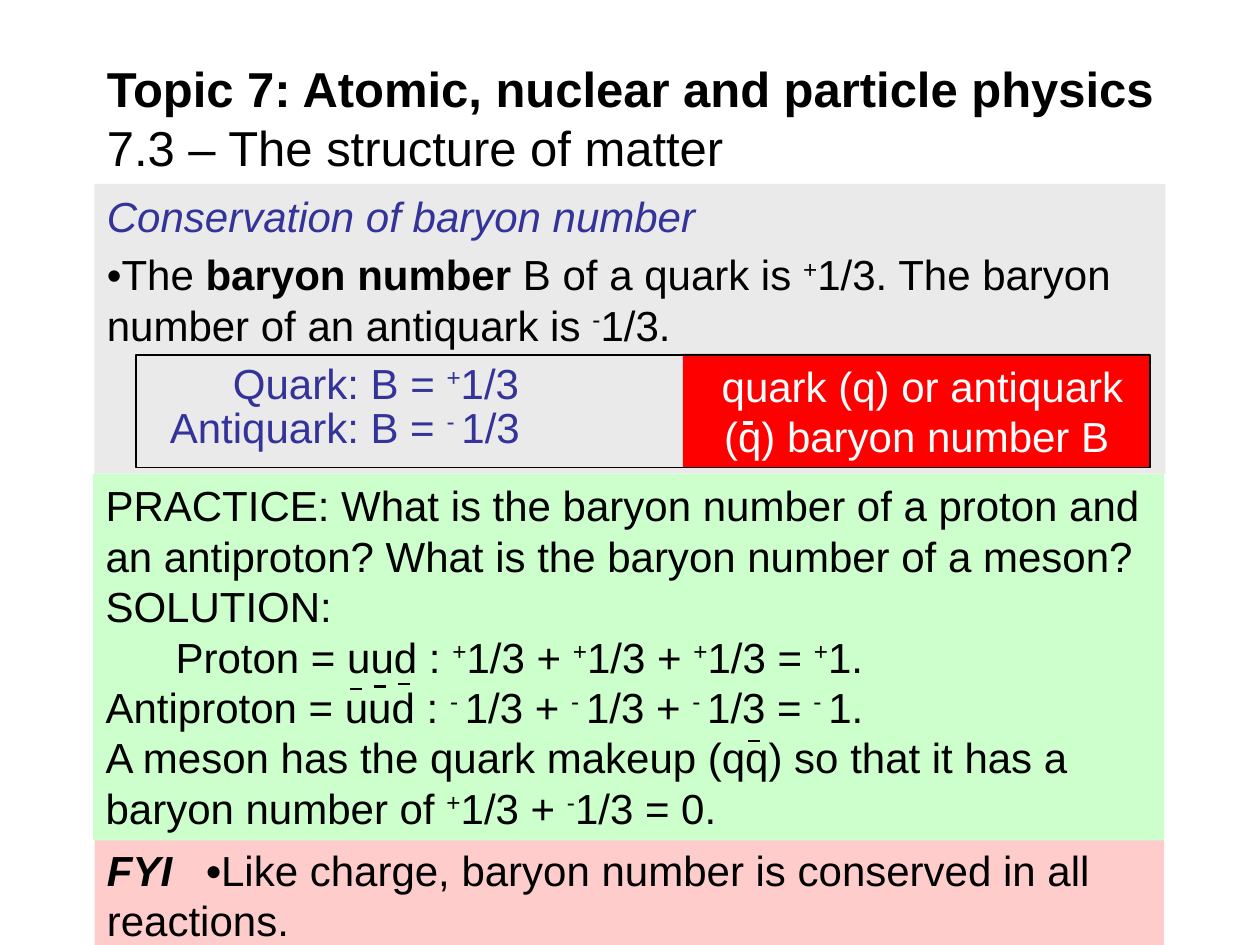
from dataclasses import dataclass

from lxml.etree import SubElement as Sub
from pptx import Presentation
from pptx.dml.color import RGBColor as Rgb
from pptx.enum.shapes import MSO_CONNECTOR as Link, MSO_SHAPE as Form
from pptx.enum.text import MSO_ANCHOR as Anchor, PP_ALIGN as Align
from pptx.oxml.ns import qn
from pptx.util import Inches, Pt

COLS, ROWS = 100, 75
WIDE, HIGH = Inches(10), Inches(7.5)
FONT = "Arial"
HUES = {
    "ink": "000000", "blue": "333399", "white": "FFFFFF", "grey": "EAEAEA",
    "green": "CCFFCC", "pink": "FFCCCC", "red": "FF0000",
}
MARKS = "^*_"


@dataclass
class Para:
    text: str
    hue: str = "ink"
    size: float = 24
    before: float = 0
    lines: float = 1
    indent: float = 0
    tab: float = 0
    align: Align = Align.LEFT


@dataclass
class Box:
    left: float
    top: float
    width: float
    height: float
    paras: tuple[Para, ...] = ()
    fill: str = ""
    line: str = ""
    anchor: Anchor = Anchor.TOP


@dataclass
class Bar:
    left: float
    top: float
    width: float = 0.9
    hue: str = "ink"
    weight: float = 1.5


def col(n: float) -> int:
    return round(WIDE * n / COLS)


def row(n: float) -> int:
    return round(HIGH * n / ROWS)


def color(hue: str) -> Rgb:
    return Rgb.from_string(HUES[hue])


def split(text: str) -> list[tuple[str, str]]:
    bits, word, style = [], "", ""
    for char in text:
        if char not in MARKS:
            word += char
            continue
        if word:
            bits.append((word, style))
        word = ""
        style = style.replace(char, "") if char in style else style + char
    return bits + [(word, style)] if word else bits


def write(para, item: Para) -> None:
    para.alignment = item.align
    para.space_before = Pt(item.before)
    para.line_spacing = item.lines
    props = para._p.get_or_add_pPr()
    if item.indent:
        props.set("indent", str(col(item.indent)))
    if item.tab:
        stops = Sub(props, qn("a:tabLst"))
        Sub(stops, qn("a:tab"), pos=str(col(item.tab)), algn="l")
    for text, style in split(item.text):
        run = para.add_run()
        run.text = text
        font = run.font
        font.name, font.size = FONT, Pt(item.size)
        font.color.rgb = color(item.hue)
        font.bold, font.italic = "*" in style, "_" in style
        if "^" in style:
            run._r.get_or_add_rPr().set("baseline", "30000")


def draw_box(slide, box: Box) -> None:
    place = col(box.left), row(box.top), col(box.width), row(box.height)
    if box.fill or box.line:
        shape = slide.shapes.add_shape(Form.RECTANGLE, *place)
        shape.shadow.inherit = False
        if box.fill:
            shape.fill.solid()
            shape.fill.fore_color.rgb = color(box.fill)
        else:
            shape.fill.background()
        if box.line:
            shape.line.color.rgb = color(box.line)
            shape.line.width = Pt(1)
        else:
            shape.line.fill.background()
    else:
        shape = slide.shapes.add_textbox(*place)
    frame = shape.text_frame
    frame.word_wrap = True
    frame.vertical_anchor = box.anchor
    for i, item in enumerate(box.paras):
        write(frame.add_paragraph() if i else frame.paragraphs[0], item)


def draw_bar(slide, bar: Bar) -> None:
    y = row(bar.top)
    line = slide.shapes.add_connector(
        Link.STRAIGHT, col(bar.left), y, col(bar.left + bar.width), y)
    line.line.color.rgb = color(bar.hue)
    line.line.width = Pt(bar.weight)
    Sub(line._element.spPr, qn("a:effectLst"))


def total(sign: str) -> str:
    third = f"^{sign}^1/3"
    return " + ".join([third] * 3) + f" = ^{sign}^1."


FYI = Box(7.5, 66.5, 84.9, 8.5, (
    Para("*_FYI\t_•*Like charge, baryon number is conserved in all reactions.",
         tab=7.9),), "pink")
DRILL = Box(7.4, 37.6, 85, 29.1, (
    Para("PRACTICE: What is the baryon number of a proton and an antiproton? "
         "What is the baryon number of a meson?"),
    Para("SOLUTION:"),
    Para("Proton = uud : " + total("+"), indent=5.56),
    Para("Antiproton = uud : " + total("- ")),
    Para("A meson has the quark makeup (qq) so that it has a baryon number of "
         "^+^1/3 + ^-^1/3 = 0."),
), "green")
RULE = Box(7.5, 14.6, 85, 23, (
    Para("_Conservation of baryon number_", "blue", before=4.8),
    Para("•The *baryon number *B of a quark is ^+^1/3. The baryon number of "
         "an antiquark is ^-^1/3.", before=4.8),
), "grey")
TITLE = Box(7.5, 4.8, 89.6, 9.1, (
    Para("*Topic 7: Atomic, nuclear and particle physics*", size=28),
    Para("7.3 – The structure of matter", size=28),
), anchor=Anchor.MIDDLE)
NOTE = Box(54.2, 28.1, 37.1, 9, (
    Para(" quark (q) or antiquark (q) baryon number B", "white",
         align=Align.CENTER),), "red")
EDGE = Box(10.8, 28.2, 80.5, 8.9, line="ink")
QUARK = Box(17.5, 28.3, 36.2, 3.5, (
    Para("Quark: B = ^+^1/3", "blue", before=4.8, lines=0.9),))
ANTI = Box(12.5, 31.8, 39.9, 3.5, (
    Para("Antiquark: B = ^- ^1/3", "blue", before=4.8, lines=0.9),))

BOXES = [FYI, DRILL, RULE, TITLE, NOTE, EDGE, QUARK, ANTI]
BARS = [
    Bar(59, 33.6, 0.8, "white", 2.25),
    *(Bar(27.8 + 1.9 * i, 54.7 - 0.2 * i) for i in range(3)),
    Bar(59.4, 58.8),
]


def main() -> None:
    deck = Presentation()
    deck.slide_width, deck.slide_height = WIDE, HIGH
    slide = deck.slides.add_slide(deck.slide_layouts[6])
    for box in BOXES:
        draw_box(slide, box)
    for bar in BARS:
        draw_bar(slide, bar)
    deck.save("out.pptx")


if __name__ == "__main__":
    main()
